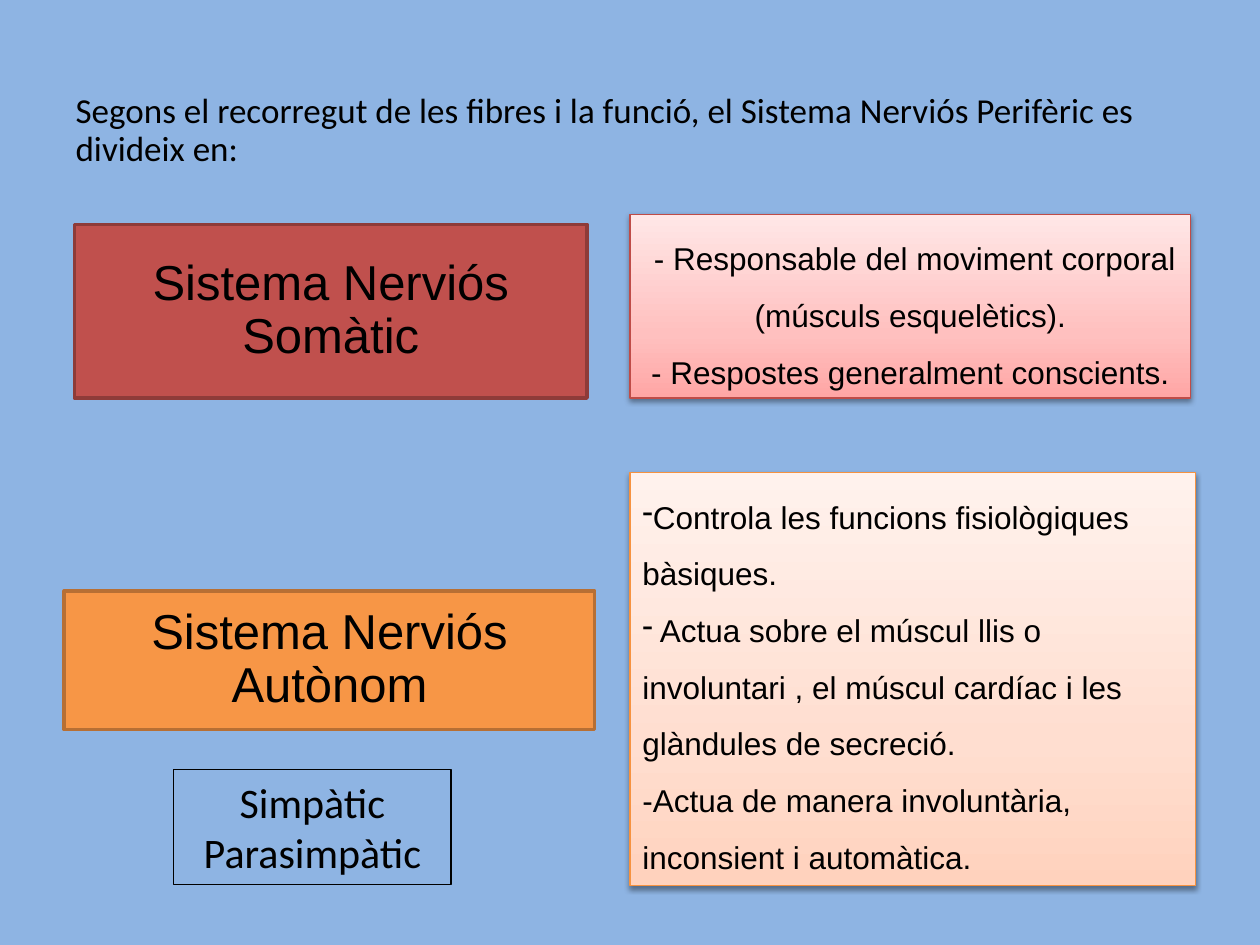
"""Build a slide on the divisions of the peripheral nervous system."""
from copy import deepcopy

from lxml import etree
from pptx import Presentation
from pptx.dml.color import RGBColor
from pptx.enum.shapes import MSO_SHAPE
from pptx.enum.text import MSO_ANCHOR, PP_ALIGN
from pptx.oxml.ns import qn
from pptx.util import Inches, Pt

RECTANGLE = MSO_SHAPE.RECTANGLE
TOP, MIDDLE = MSO_ANCHOR.TOP, MSO_ANCHOR.MIDDLE
LEFT, CENTER = PP_ALIGN.LEFT, PP_ALIGN.CENTER

COLORS = {
    "background": "8EB4E3",
    "text": "000000",
    "somatic": "C0504D",
    "somatic_line": "8E3B39",
    "somatic_note_line": "BF4C48",
    "autonomic": "F79646",
    "autonomic_line": "B76F34",
    "autonomic_note_line": "F69240",
}
GRADIENTS = {
    "somatic": ("FFA6A5", "FFC0BF", "FFE7E7"),
    "autonomic": ("FFD2BD", "FFDED0", "FFF2ED"),
}
GRADIENT_POSITIONS = (0, 0.35, 1)


def rgb(name):
    """Return the named palette colour."""
    return RGBColor.from_string(COLORS[name])


class SlideBuilder:
    """Hold the style and the current slide."""

    heading_font = "Arial"
    body_font = "Calibri"

    def __init__(self, slide):
        """Keep the slide and paint its background."""
        self.slide = slide
        fill = slide.background.fill
        fill.solid()
        fill.fore_color.rgb = rgb("background")

    def set_text(self, shape, lines, font, size, align=CENTER, anchor=MIDDLE,
                 spacing=1.0, inset=None):
        """Fill the shape with formatted paragraphs."""
        frame = shape.text_frame
        frame.word_wrap = True
        frame.vertical_anchor = anchor
        if inset is not None:
            frame.margin_left = frame.margin_right = Inches(inset)
            frame.margin_top = frame.margin_bottom = Inches(inset)
        frame.text = "\n".join(lines)
        for paragraph in frame.paragraphs:
            paragraph.alignment = align
            paragraph.line_spacing = spacing
            for run in paragraph.runs:
                run.font.name = font
                run.font.size = Pt(size)
                run.font.color.rgb = rgb("text")

    def rectangle(self, box, line, width):
        """Add an unfilled rectangle with an outline."""
        shape = self.slide.shapes.add_shape(RECTANGLE, *map(Inches, box))
        shape.fill.background()
        shape.line.color.rgb = rgb(line)
        shape.line.width = Pt(width)
        shape.shadow.inherit = False
        return shape

    def intro(self, box, text):
        """Add the opening sentence."""
        shape = self.slide.shapes.add_textbox(*map(Inches, box))
        self.set_text(shape, [text], self.body_font, 20, LEFT, spacing=0.9, inset=0.01)

    def heading(self, box, system, text):
        """Add a solid box that names a system."""
        shape = self.rectangle(box, f"{system}_line", 2)
        shape.fill.solid()
        shape.fill.fore_color.rgb = rgb(system)
        self.set_text(shape, [text], self.heading_font, 28, spacing=0.9, inset=0.02)

    def note(self, box, system, lines, align, bullets=0):
        """Add a shaded description, with dashes on the first paragraphs."""
        shape = self.rectangle(box, f"{system}_note_line", 0.75)
        self.shade(shape, GRADIENTS[system])
        self.drop_shadow(shape)
        self.set_text(shape, lines, self.heading_font, 18, align, TOP, 1.5)
        for paragraph in shape.text_frame.paragraphs[:bullets]:
            properties = paragraph._p.get_or_add_pPr()
            etree.SubElement(properties, qn("a:buChar"), char="-")

    def branches(self, box, lines):
        """Add the outlined list of branches."""
        shape = self.rectangle(box, "text", 0.75)
        self.set_text(shape, lines, self.body_font, 24, anchor=TOP)

    def shade(self, shape, colors):
        """Apply a vertical three-stop gradient."""
        shape.fill.gradient()
        shape.fill.gradient_angle = 90
        stop_list = shape._element.spPr.find(f".//{qn('a:gsLst')}")
        stop_list.append(deepcopy(stop_list[-1]))
        stops = zip(shape.fill.gradient_stops, GRADIENT_POSITIONS, colors)
        for stop, position, color in stops:
            stop.position = position
            stop.color.rgb = RGBColor.from_string(color)

    def drop_shadow(self, shape):
        """Add a soft shadow below the shape."""
        effects = shape._element.spPr.find(qn("a:effectLst"))
        shadow = etree.SubElement(
            effects, qn("a:outerShdw"), blurRad=str(Pt(3.1)), dist=str(Pt(1.6)),
            dir="5400000", rotWithShape="0")
        color = etree.SubElement(shadow, qn("a:srgbClr"), val=COLORS["text"])
        etree.SubElement(color, qn("a:alpha"), val="38000")


def main():
    """Create and save the presentation."""
    presentation = Presentation()
    presentation.slide_width = Inches(10)
    presentation.slide_height = Inches(7.5)
    slide = presentation.slides.add_slide(presentation.slide_layouts[6])
    builder = SlideBuilder(slide)
    builder.intro(
        (0.59, 0.49, 9.01, 1.1),
        "Segons el recorregut de les fibres i la funció, "
        "el Sistema Nerviós Perifèric es divideix en:")
    builder.note((5, 1.7, 4.45, 1.46), "somatic", [
        " - Responsable del moviment corporal (músculs esquelètics).",
        "- Respostes generalment conscients.",
    ], CENTER)
    builder.heading((0.59, 1.78, 4.07, 1.38), "somatic", "Sistema Nerviós Somàtic")
    builder.heading((0.51, 4.69, 4.21, 1.1), "autonomic", "Sistema Nerviós Autònom")
    builder.note((5, 3.75, 4.49, 3.28), "autonomic", [
        "Controla les funcions fisiològiques bàsiques.",
        " Actua sobre el múscul llis o involuntari , el múscul cardíac "
        "i les glàndules de secreció.",
        "-Actua de manera involuntària, inconsient i automàtica.",
    ], LEFT, bullets=2)
    builder.branches((1.38, 6.11, 2.2, 0.91), ["Simpàtic", "Parasimpàtic"])
    presentation.save("out.pptx")


if __name__ == "__main__":
    main()
